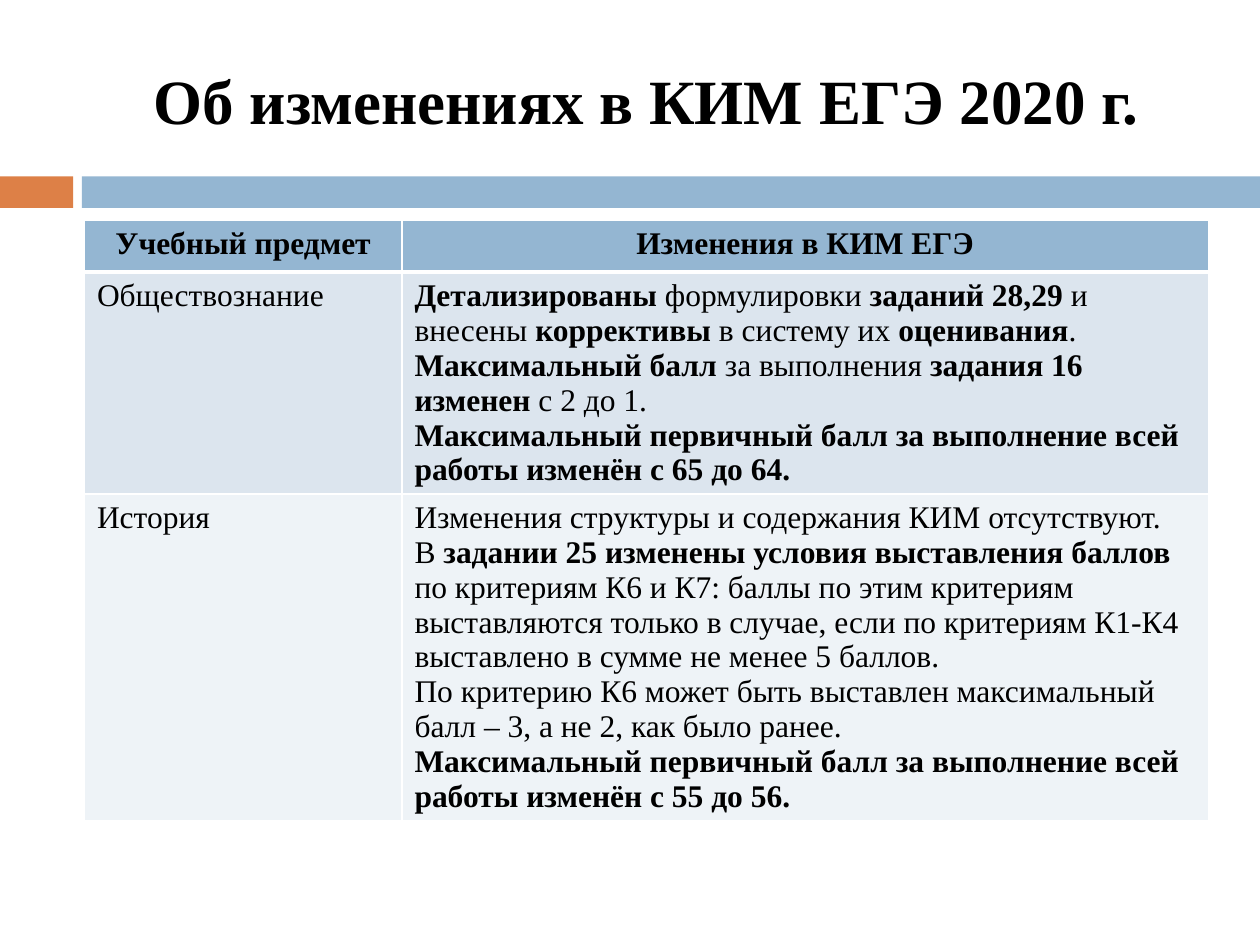
from lxml import etree
from pptx import Presentation
from pptx.dml.color import RGBColor
from pptx.enum import shapes, text
from pptx.oxml.ns import qn
from pptx.util import Inches, Pt

FONT = "Times New Roman"
BLUE, ORANGE, WHITE, BLACK = "94B6D2", "DD8047", "FFFFFF", "000000"
ROW_FILLS = [BLUE, "DCE5EE", "EEF3F7"]
COLUMN_WIDTHS = [2.52, 6.4]
ROW_HEIGHTS = [0.41, 1.76, 2.59]

# Each cell is a list of paragraphs; ** switches bold on and off.
ROWS = [
    [["**Учебный предмет**"], ["**Изменения в КИМ ЕГЭ**"]],
    [["Обществознание"], [
        "**Детализированы** формулировки **заданий 28,29 **и внесены "
        "**коррективы** в систему их **оценивания**.",
        "**Максимальный балл **за выполнения **задания 16 изменен** с 2 до 1.",
        "**Максимальный первичный балл за выполнение всей работы изменён "
        "с 65 до 64.**",
    ]],
    [["История"], [
        "Изменения структуры и содержания КИМ отсутствуют.",
        "В **задании 25 изменены условия выставления баллов **по критериям "
        "К6 и К7: баллы по этим критериям выставляются только в случае, если "
        "по критериям К1-К4 выставлено в сумме не менее 5 баллов.",
        "По критерию К6 может быть выставлен максимальный балл – 3, а не 2, "
        "как было ранее.",
        "**Максимальный первичный балл за выполнение всей работы изменён "
        "с 55 до 56.**",
    ]],
]


def color(value):
    return RGBColor.from_string(value)


def format_run(run, size, bold):
    run.font.name = FONT
    run.font.size = Pt(size)
    run.font.bold = bold
    run.font.color.rgb = color(BLACK)


def add_band(slide, left, top, width, height, marker=0.58, gap=0.07):
    """Draw the short orange marker and the long blue bar beside it."""
    start = marker + gap
    for x, bar_width, fill in [(left, marker, ORANGE),
                               (left + start, width - start, BLUE)]:
        bar = slide.shapes.add_shape(
            shapes.MSO_SHAPE.RECTANGLE,
            Inches(x), Inches(top), Inches(bar_width), Inches(height))
        bar.shadow.inherit = False
        bar.fill.solid()
        bar.fill.fore_color.rgb = color(fill)
        bar.line.fill.background()


def place_title(slide, left, top, width, height):
    title = slide.shapes.title
    title.left, title.top = Inches(left), Inches(top)
    title.width, title.height = Inches(width), Inches(height)
    frame = title.text_frame
    frame.text = "Об изменениях в КИМ ЕГЭ 2020 г."
    frame.word_wrap = True
    frame.vertical_anchor = text.MSO_ANCHOR.MIDDLE
    paragraph = frame.paragraphs[0]
    paragraph.alignment = text.PP_ALIGN.CENTER
    format_run(paragraph.runs[0], 36, True)


def fill_cell(cell, paragraphs, alignment):
    frame = cell.text_frame
    for index, content in enumerate(paragraphs):
        paragraph = frame.add_paragraph() if index else frame.paragraphs[0]
        paragraph.alignment = alignment
        for position, part in enumerate(content.split("**")):
            if part:
                run = paragraph.add_run()
                run.text = part
                format_run(run, 18, position % 2 == 1)


def set_borders(cell, widths):
    properties = cell._tc.get_or_add_tcPr()
    for index, (side, width) in enumerate(widths.items()):
        line = etree.Element(qn(f"a:ln{side}"), w=str(Pt(width)))
        fill = etree.SubElement(line, qn("a:solidFill"))
        etree.SubElement(fill, qn("a:srgbClr"), val=WHITE)
        properties.insert(index, line)


def add_changes_table(slide, left, top):
    table = slide.shapes.add_table(
        len(ROWS), len(COLUMN_WIDTHS), Inches(left), Inches(top),
        Inches(sum(COLUMN_WIDTHS)), Inches(sum(ROW_HEIGHTS))).table
    for column, width in zip(table.columns, COLUMN_WIDTHS):
        column.width = Inches(width)
    for row_index, row in enumerate(ROWS):
        table.rows[row_index].height = Inches(ROW_HEIGHTS[row_index])
        header = row_index == 0
        alignment = text.PP_ALIGN.CENTER if header else text.PP_ALIGN.LEFT
        borders = {"L": 1, "R": 1, "T": 3 if row_index == 1 else 1,
                   "B": 3 if header else 1}
        for column_index, paragraphs in enumerate(row):
            cell = table.cell(row_index, column_index)
            cell.fill.solid()
            cell.fill.fore_color.rgb = color(ROW_FILLS[row_index])
            fill_cell(cell, paragraphs, alignment)
            set_borders(cell, borders)


def main():
    presentation = Presentation()
    presentation.slide_width = Inches(10)
    presentation.slide_height = Inches(7.5)
    slide = presentation.slides.add_slide(presentation.slide_layouts[5])
    add_band(slide, 0, 1.4, 10, 0.25)
    place_title(slide, 0.67, 0.25, 8.92, 1.08)
    add_changes_table(slide, 0.67, 1.75)
    presentation.save("out.pptx")


if __name__ == "__main__":
    main()
